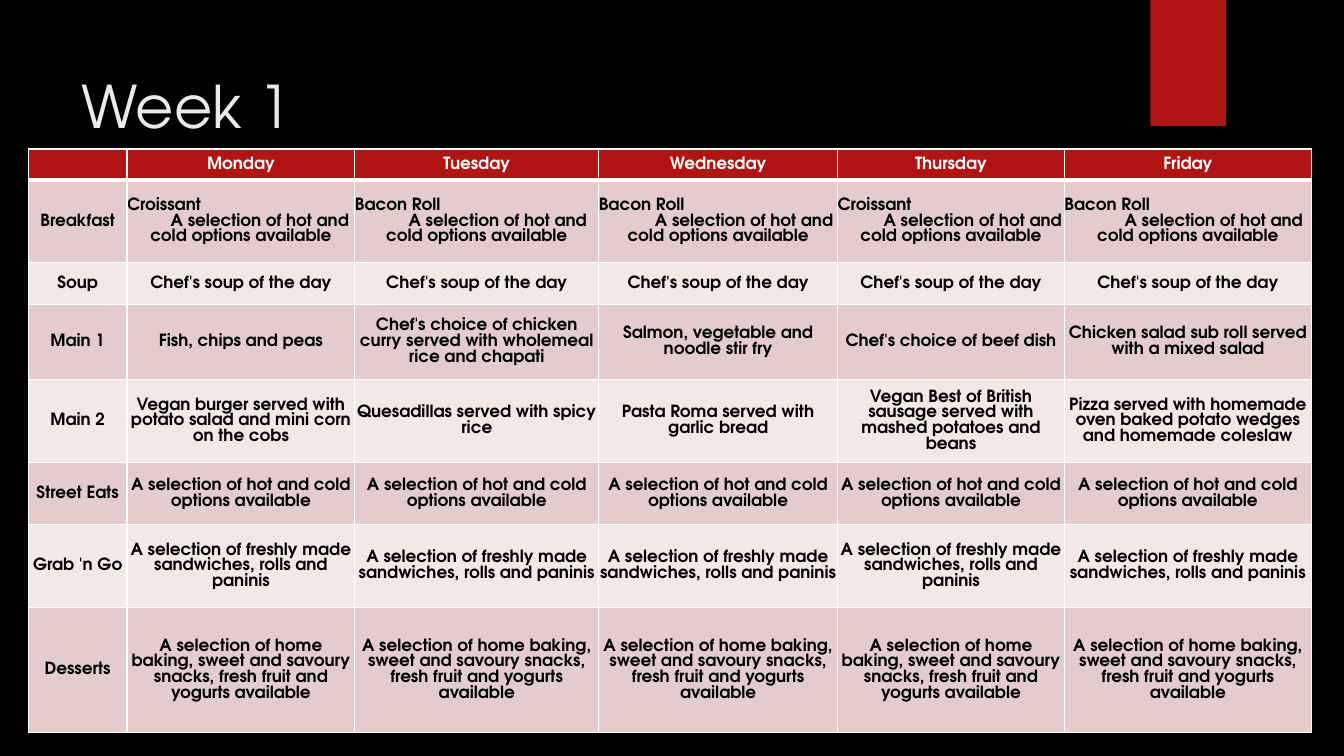
from lxml.etree import SubElement
from pptx import Presentation
from pptx.dml.color import RGBColor
from pptx.enum.shapes import MSO_SHAPE
from pptx.enum.text import MSO_ANCHOR, PP_ALIGN
from pptx.oxml.ns import qn
from pptx.util import Pt

BLACK = RGBColor(0x00, 0x00, 0x00)
WHITE = RGBColor(0xFF, 0xFF, 0xFF)
RED = RGBColor(0xB0, 0x15, 0x13)
PINK = RGBColor(0xE4, 0xCC, 0xCC)
PALE = RGBColor(0xF2, 0xE8, 0xE7)
TITLE_GREY = RGBColor(0xEB, 0xEB, 0xEB)
FONT = "TeX Gyre Adventor"

HOT_COLD = "A selection of hot and cold options available"
DAYS = ["Monday", "Tuesday", "Wednesday", "Thursday", "Friday"]
BREAKFASTS = ["Croissant", "Bacon Roll", "Bacon Roll", "Croissant", "Bacon Roll"]
MENU = [
    ["", *DAYS],
    ["Breakfast", *[f"{item}\n{HOT_COLD}" for item in BREAKFASTS]],
    ["Soup", *["Chef's soup of the day"] * 5],
    ["Main 1",
     "Fish, chips and peas",
     "Chef's choice of chicken curry served with wholemeal rice and chapati",
     "Salmon, vegetable and noodle stir fry",
     "Chef's choice of beef dish",
     "Chicken salad sub roll served with a mixed salad"],
    ["Main 2",
     "Vegan burger served with potato salad and mini corn on the cobs",
     "Quesadillas served with spicy rice",
     "Pasta Roma served with garlic bread",
     "Vegan Best of British sausage served with mashed potatoes and beans",
     "Pizza served with homemade oven baked potato wedges and homemade coleslaw"],
    ["Street Eats", *[HOT_COLD] * 5],
    ["Grab 'n Go", *["A selection of freshly made sandwiches, rolls and paninis"] * 5],
    ["Desserts", *["A selection of home baking, sweet and savoury snacks, "
                   "fresh fruit and yogurts available"] * 5],
]
COL_WIDTHS = [70.56, 162.72, 174.24, 170.64, 162, 176.4]
ROW_HEIGHTS = [22.32, 59.04, 29.52, 54, 59.04, 44.64, 59.04, 89.28]
BREAKFAST_INDENTS = [0, 27, 30, 37, 31, 37]


def add_run(p, text, size, color, bold=False):
    r = p.add_run()
    r.text = text
    for name, value in {"name": FONT, "size": Pt(size), "bold": bold}.items():
        setattr(r.font, name, value)
    r.font.color.rgb = color


def add_borders(cell, widths):
    tcPr = cell._tc.get_or_add_tcPr()
    for position, (side, width) in enumerate(widths.items()):
        ln = SubElement(tcPr, qn(f"a:{side}"), w=str(Pt(width)))
        solid = SubElement(ln, qn("a:solidFill"))
        SubElement(solid, qn("a:srgbClr"), val=str(WHITE))
        tcPr.insert(position, ln)


prs = Presentation()
prs.slide_width, prs.slide_height = Pt(960), Pt(540)
s = prs.slides.add_slide(prs.slide_layouts[6])
s.background.fill.solid()
s.background.fill.fore_color.rgb = BLACK

sp = s.shapes.add_shape(MSO_SHAPE.RECTANGLE, Pt(821.8), Pt(0), Pt(54), Pt(90))
sp.shadow.inherit = False
sp.fill.solid()
sp.fill.fore_color.rgb = RED
sp.line.fill.background()

sp = s.shapes.add_textbox(Pt(51), Pt(36), Pt(741), Pt(110))
tf = sp.text_frame
for name, value in {"word_wrap": True, "margin_top": Pt(13.7),
                    "vertical_anchor": MSO_ANCHOR.TOP}.items():
    setattr(tf, name, value)
add_run(tf.paragraphs[0], "Week 1", 42, TITLE_GREY)

table = s.shapes.add_table(len(MENU), len(COL_WIDTHS), Pt(20.2), Pt(106.4),
                           Pt(sum(COL_WIDTHS)), Pt(sum(ROW_HEIGHTS))).table
table.horz_banding = False
for column, width in zip(table.columns, COL_WIDTHS):
    column.width = Pt(width)
for row, height in zip(table.rows, ROW_HEIGHTS):
    row.height = Pt(height)

CELL_FORMAT = {"margin_left": 0, "margin_right": 0, "margin_top": 0,
               "margin_bottom": 0, "vertical_anchor": MSO_ANCHOR.MIDDLE}
for i, entries in enumerate(MENU):
    for j, entry in enumerate(entries):
        cell = table.cell(i, j)
        for name, value in CELL_FORMAT.items():
            setattr(cell, name, value)
        cell.fill.solid()
        cell.fill.fore_color.rgb = RED if i == 0 else PINK if i % 2 else PALE
        add_borders(cell, {"lnL": 1, "lnR": 1, "lnT": 3 if i == 1 else 1,
                           "lnB": 3 if i == 0 else 1})
        tf = cell.text_frame
        lines = entry.split("\n")
        for k, line in enumerate(lines):
            p = tf.add_paragraph() if k else tf.paragraphs[0]
            p.alignment = PP_ALIGN.LEFT if k < len(lines) - 1 else PP_ALIGN.CENTER
            if k:
                p._p.get_or_add_pPr().set("indent", str(Pt(BREAKFAST_INDENTS[j])))
            add_run(p, line, 12, BLACK if i else WHITE, True)

prs.save("out.pptx")
